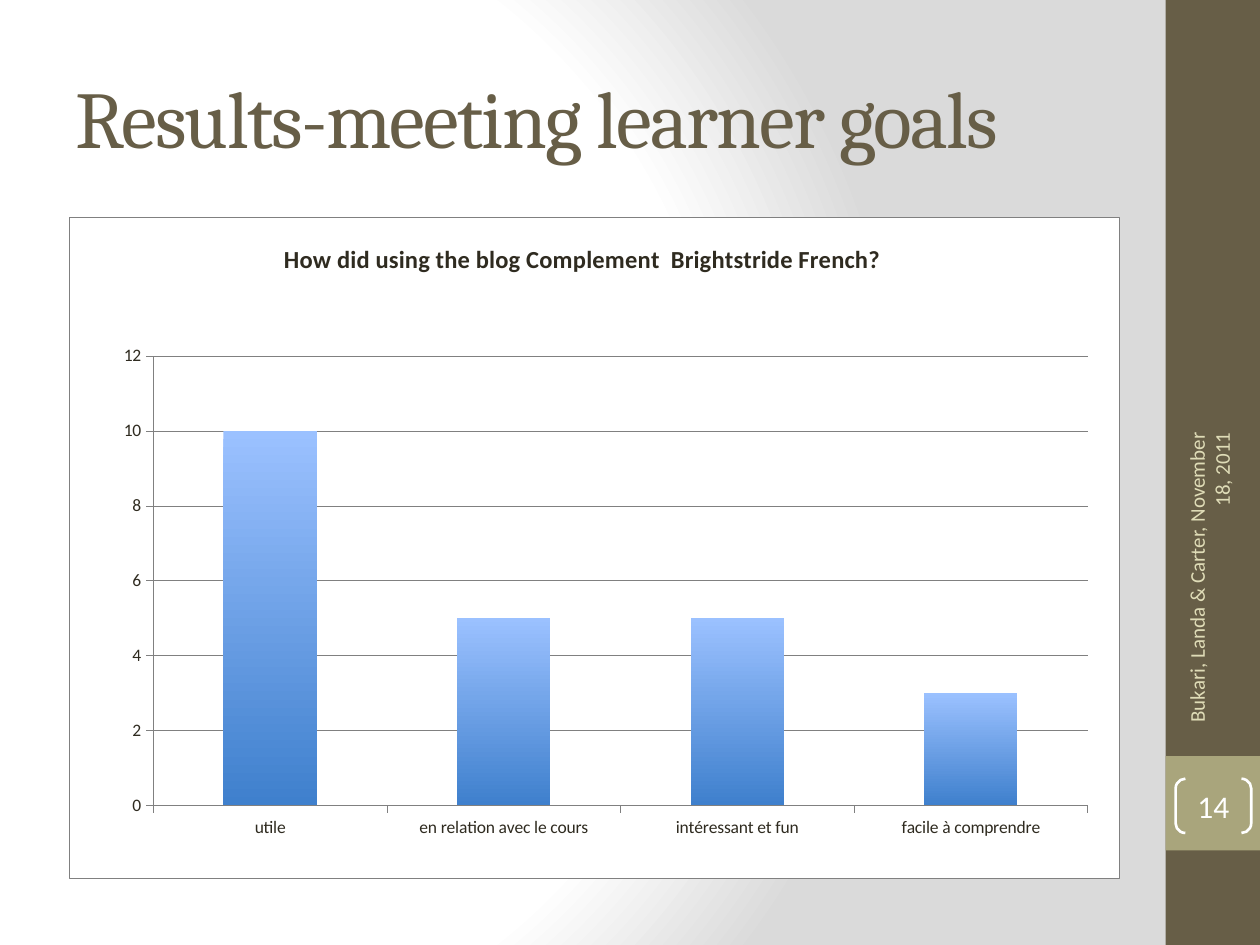
import pptx
import pptx.chart.data
import pptx.dml.color
import pptx.enum.chart
import pptx.enum.shapes
import pptx.enum.text
import pptx.oxml
import pptx.oxml.ns
import pptx.util

Pt = pptx.util.Pt
qn = pptx.oxml.ns.qn
ALIGN = pptx.enum.text.PP_ALIGN
SHAPE = pptx.enum.shapes.MSO_SHAPE
COLORS = {
    "brown": "675E47", "olive": "A9A57C", "cream": "DFDCB7", "white": "FFFFFF",
    "mist": "DADADA", "ink": "2F2B20", "grey": "808080",
    "bar_top": "9BC1FF", "bar_bottom": "3F80CD",
}
NAMESPACES = pptx.oxml.ns.nsdecls("a", "c")


def rgb(name):
    return pptx.dml.color.RGBColor.from_string(COLORS[name])


def write_text(box, text, size, color, font="Calibri", align=ALIGN.LEFT, spacing=None, inset=None):
    frame = box.text_frame
    frame.word_wrap = True
    frame.vertical_anchor = pptx.enum.text.MSO_ANCHOR.MIDDLE
    if inset is not None:
        frame.margin_left = frame.margin_right = Pt(inset)
        frame.margin_top = frame.margin_bottom = Pt(inset)
    para = frame.paragraphs[0]
    para.alignment = align
    span = para.add_run()
    span.text = text
    span.font.size = Pt(size)
    span.font.name = font
    span.font.color.rgb = rgb(color)
    if spacing is not None:
        span._r.get_or_add_rPr().set("spc", str(spacing * 100))


def add_block(page, left, top, width, height, color):
    block = page.shapes.add_shape(SHAPE.RECTANGLE, Pt(left), Pt(top), Pt(width), Pt(height))
    block.shadow.inherit = False
    block.fill.solid()
    block.fill.fore_color.rgb = rgb(color)
    block.line.fill.background()


def paint_background(page):
    stops = "".join(
        f'<a:gs pos="{place * 1000}"><a:srgbClr val="{COLORS[name]}"/></a:gs>'
        for place, name in ((0, "white"), (75, "white"), (100, "mist")))
    page.background.fill.gradient()
    old = next(page._element.iter(qn("a:gradFill")))
    new = pptx.oxml.parse_xml(
        f'<a:gradFill {NAMESPACES} rotWithShape="1"><a:gsLst>{stops}</a:gsLst><a:path path="circle">'
        '<a:fillToRect l="20000" t="50000" r="100000" b="50000"/></a:path></a:gradFill>')
    old.getparent().replace(old, new)


def add_sidebar(page, left, top, width, height):
    add_block(page, left, top, width, height, "brown")
    add_block(page, left, top + 432, width, width, "olive")

    footer = page.shapes.add_textbox(Pt(left - 68.4), Pt(top + 319), Pt(186.5), Pt(28.8))
    footer.rotation = 270
    write_text(footer, "Bukari, Landa & Carter, November 18, 2011", size=12,
               color="cream", align=ALIGN.RIGHT)

    number = page.shapes.add_shape(SHAPE.DOUBLE_BRACKET, Pt(left + 5.8), Pt(top + 445),
                                   Pt(43.2), Pt(31))
    number.adjustments[0] = 0.18
    number.shadow.inherit = False
    number.fill.background()
    number.line.color.rgb = rgb("white")
    number.line.width = Pt(1.5)
    write_text(number, "14", size=18, color="white", align=ALIGN.CENTER, inset=0)


def add_title(page, left, top, width, height):
    title = page.shapes.add_textbox(Pt(left), Pt(top), Pt(width), Pt(height))
    write_text(title, "Results-meeting learner goals", size=46, color="brown",
               font="Cambria", spacing=-1)


def set_layout(parent, before, **places):
    """Place a chart part by fractions of the chart, ahead of the named child."""
    for old in parent.findall(qn("c:layout")):
        parent.remove(old)
    target = '<c:layoutTarget val="inner"/>' if "w" in places else ""
    modes = "".join(f'<c:{side}Mode val="edge"/>' for side in "xy")
    values = "".join(f'<c:{side} val="{value}"/>' for side, value in places.items())
    layout = pptx.oxml.parse_xml(
        f"<c:layout {NAMESPACES}><c:manualLayout>{target}{modes}{values}</c:manualLayout></c:layout>")
    parent.find(qn(before)).addprevious(layout)


def style_line(line):
    line.color.rgb = rgb("grey")
    line.width = Pt(0.25)


def style_axes(chart):
    for axis in (chart.category_axis, chart.value_axis):
        axis.major_tick_mark = pptx.enum.chart.XL_TICK_MARK.OUTSIDE
        axis.minor_tick_mark = pptx.enum.chart.XL_TICK_MARK.NONE
        style_line(axis.format.line)
    chart.category_axis.has_major_gridlines = False
    scale = chart.value_axis
    scale.minimum_scale, scale.maximum_scale, scale.major_unit = 0, 12, 2
    scale.has_major_gridlines = True
    style_line(scale.major_gridlines.format.line)


def add_results_chart(page, left, top, width, height):
    data = pptx.chart.data.CategoryChartData()
    data.categories = ["utile", "en relation avec le cours", "intéressant et fun",
                       "facile à comprendre"]
    data.add_series("Series 1", (10, 5, 5, 3))
    chart = page.shapes.add_chart(pptx.enum.chart.XL_CHART_TYPE.COLUMN_STACKED,
                                  Pt(left), Pt(top), Pt(width), Pt(height), data).chart
    chart.has_legend = False
    chart.font.size = Pt(10)
    chart.font.name = "Calibri"
    chart.font.color.rgb = rgb("ink")

    chart.has_title = True
    span = chart.chart_title.text_frame.paragraphs[0].add_run()
    span.text = "How did using the blog Complement  Brightstride French?"
    span.font.size = Pt(14)
    span.font.bold = True
    span.font.name = "Calibri"
    span.font.color.rgb = rgb("ink")
    chart.chart_title.include_in_layout = False
    set_layout(chart.chart_title._element, "c:overlay", x=0.2, y=0.03)

    plot = chart.plots[0]
    plot.gap_width = 150
    plot.overlap = 100
    plot.vary_by_categories = False
    set_layout(plot._element.getparent(), "c:barChart", x=0.08, y=0.21, w=0.89, h=0.68)
    bars = plot.series[0].format.fill
    bars.gradient()
    bars.gradient_angle = 270
    for stop, place, name in zip(bars.gradient_stops, (0, 1), ("bar_top", "bar_bottom")):
        stop.position = place
        stop.color.rgb = rgb(name)
    style_axes(chart)

    frame = pptx.oxml.parse_xml(
        f'<c:spPr {NAMESPACES}><a:solidFill><a:srgbClr val="{COLORS["white"]}"/></a:solidFill>'
        f'<a:ln w="{Pt(0.25)}"><a:solidFill><a:srgbClr val="{COLORS["grey"]}"/></a:solidFill></a:ln>'
        "</c:spPr>")
    chart._chartSpace.find(qn("c:txPr")).addprevious(frame)


def main():
    deck = pptx.Presentation()
    deck.slide_width, deck.slide_height = Pt(720), Pt(540)
    page = deck.slides.add_slide(deck.slide_layouts[6])
    paint_background(page)
    add_sidebar(page, 666, 0, 54, 540)
    add_title(page, 36, 21.6, 600, 90)
    add_results_chart(page, 39.6, 124, 600, 378)
    deck.save("out.pptx")


if __name__ == "__main__":
    main()
